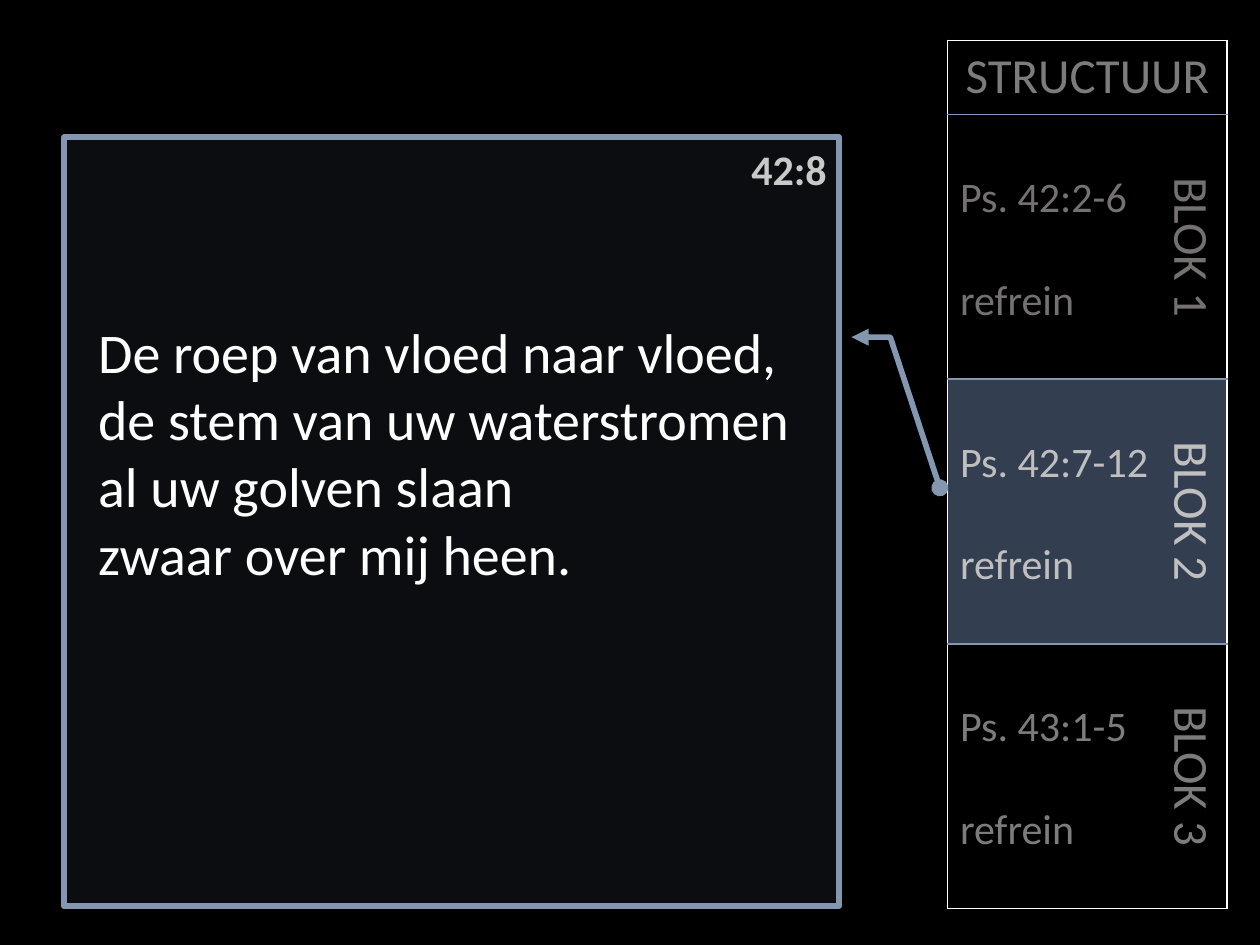
from typing import NamedTuple, Optional

from pptx import Presentation
from pptx.dml.color import RGBColor
from pptx.enum.shapes import MSO_SHAPE
from pptx.enum.text import MSO_ANCHOR, PP_ALIGN
from pptx.oxml.ns import qn
from pptx.util import Inches, Pt
from lxml.etree import SubElement

BLACK = RGBColor(0x00, 0x00, 0x00)
WHITE = RGBColor(0xFF, 0xFF, 0xFF)
BLUE = RGBColor(0x84, 0x97, 0xB0)
NAVY = RGBColor(0x22, 0x2A, 0x35)
SLATE = RGBColor(0x33, 0x3F, 0x50)
GRAY = RGBColor(0x7C, 0x7C, 0x7C)
WARM_GRAY = RGBColor(0x76, 0x71, 0x71)
SILVER = RGBColor(0xBF, 0xBF, 0xBF)
LIGHT_GRAY = RGBColor(0xC9, 0xC9, 0xC9)


class Block(NamedTuple):
    name: str
    verses: str
    color: RGBColor
    fill: Optional[RGBColor] = None


BLOCKS = [
    Block("BLOK 1", "Ps. 42:2-6", WARM_GRAY),
    Block("BLOK 2", "Ps. 42:7-12", SILVER, SLATE),
    Block("BLOK 3", "Ps. 43:1-5", GRAY),
]
VERSE_LINES = [
    "De roep van vloed naar vloed,",
    "de stem van uw waterstromen",
    "al uw golven slaan",
    "zwaar over mij heen.",
]


def write(frame, lines, size, color, align=PP_ALIGN.LEFT, bold=False, gap=0) -> None:
    """Write one paragraph per line, with a gap in points between them."""
    for index, line in enumerate(lines):
        paragraph = frame.paragraphs[0] if index == 0 else frame.add_paragraph()
        paragraph.alignment = align
        if index and gap:
            paragraph.space_before = Pt(gap)
        run = paragraph.add_run()
        run.text = line
        font_format = {"name": "Calibri", "size": Pt(size), "bold": bold}
        for name, value in font_format.items():
            setattr(run.font, name, value)
        run.font.color.rgb = color


def style_cell(cell, borders: dict, fill: Optional[RGBColor] = None) -> None:
    """Set the four borders (none where no colour is given) and the fill."""
    properties = cell._tc.get_or_add_tcPr()
    for side in "LRTB":
        line = SubElement(properties, qn(f"a:ln{side}"), w=str(Pt(1)))
        color = borders.get(side)
        if color is None:
            SubElement(line, qn("a:noFill"))
        else:
            solid = SubElement(line, qn("a:solidFill"))
            SubElement(solid, qn("a:srgbClr"), val=str(color))
    if fill is None:
        cell.fill.background()
    else:
        cell.fill.solid()
        cell.fill.fore_color.rgb = fill


def add_structure_table(slide) -> None:
    frame = slide.shapes.add_table(
        len(BLOCKS) + 1, 2, Inches(7.52), Inches(0.32), Inches(2.22), Inches(6.88))
    table = frame.table
    table.first_row = table.horz_banding = False
    for column, width in zip(table.columns, (1.77, 0.45)):
        column.width = Inches(width)
    for index, row in enumerate(table.rows):
        row.height = Inches(2.1 if index else 0.59)

    # Header across both columns
    header = table.cell(0, 0)
    header.merge(table.cell(0, 1))
    for column in range(2):
        style_cell(table.cell(0, column), {"L": WHITE, "R": WHITE, "T": WHITE, "B": BLUE})
    write(header.text_frame, ["STRUCTUUR"], 28, GRAY, PP_ALIGN.CENTER)

    # One row per block
    for row, block in enumerate(BLOCKS, start=1):
        edges = {"T": BLUE, "B": WHITE if row == len(BLOCKS) else BLUE}
        verses, name = table.cell(row, 0), table.cell(row, 1)
        style_cell(verses, {**edges, "L": WHITE}, block.fill)
        style_cell(name, {**edges, "R": WHITE}, block.fill)
        verses.margin_top = Inches(0.46)
        write(verses.text_frame, [block.verses, "refrein"], 24, block.color, gap=29.3)
        name.vertical_anchor = MSO_ANCHOR.MIDDLE
        name._tc.get_or_add_tcPr().set("vert", "vert")
        write(name.text_frame, [block.name], 28, block.color, PP_ALIGN.CENTER)


def add_callout(slide) -> None:
    callout = slide.shapes.add_shape(
        MSO_SHAPE.LINE_CALLOUT_2, Inches(0.51), Inches(1.09), Inches(6.15), Inches(6.1))
    callout.shadow.inherit = False
    for index, value in enumerate((0.26, 1.016, 0.26, 1.066, 0.456, 1.13)):
        callout.adjustments[index] = value
    callout.fill.solid()
    callout.fill.fore_color.rgb = NAVY
    fill_color = callout._element.spPr.find(qn("a:solidFill"))[0]
    SubElement(fill_color, qn("a:alpha"), val="33000")
    callout.line.color.rgb = BLUE
    callout.line.width = Pt(3.25)
    line = callout.line._get_or_add_ln()
    SubElement(line, qn("a:headEnd"), type="triangle")
    SubElement(line, qn("a:tailEnd"), type="oval")


def add_text(slide, left, top, width, height, lines, size, color, **options) -> None:
    box = slide.shapes.add_textbox(Inches(left), Inches(top), Inches(width), Inches(height))
    box.text_frame.word_wrap = True
    write(box.text_frame, lines, size, color, **options)


def main() -> None:
    presentation = Presentation()
    presentation.slide_width, presentation.slide_height = Inches(10), Inches(7.5)
    slide = presentation.slides.add_slide(presentation.slide_layouts[6])
    slide.background.fill.solid()
    slide.background.fill.fore_color.rgb = BLACK

    add_structure_table(slide)
    add_callout(slide)
    # Verse text and its number
    add_text(slide, 0.68, 2.47, 5.81, 2.26, VERSE_LINES, 32, WHITE)
    add_text(slide, 5.48, 1.09, 1.18, 0.5, ["42:8"], 24, LIGHT_GRAY,
             align=PP_ALIGN.RIGHT, bold=True)
    presentation.save("out.pptx")


if __name__ == "__main__":
    main()
